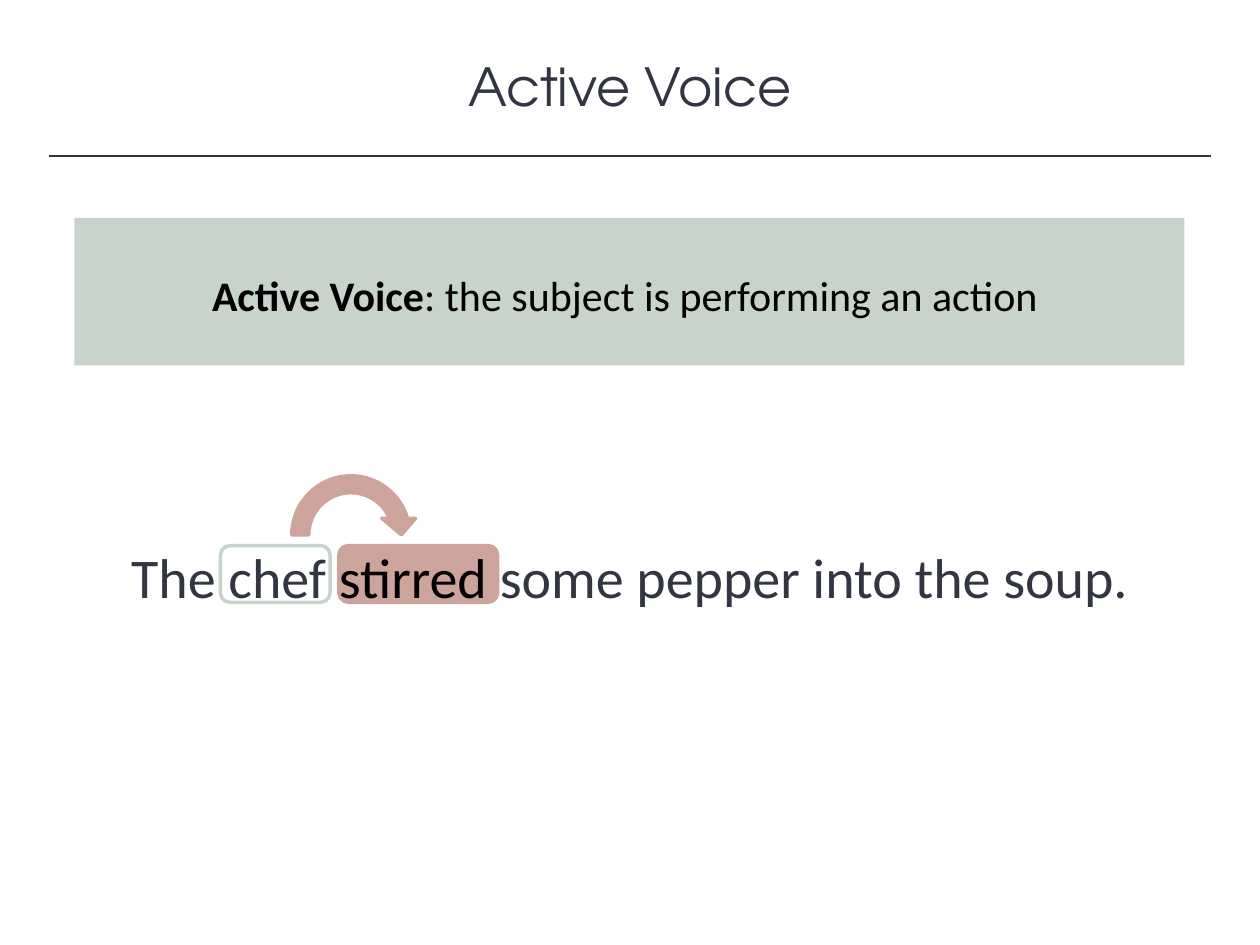
from dataclasses import dataclass

from pptx import Presentation
from pptx.dml.color import RGBColor
from pptx.enum.shapes import MSO_CONNECTOR, MSO_SHAPE
from pptx.enum.text import MSO_ANCHOR, PP_ALIGN
from pptx.oxml.ns import qn
from pptx.util import Inches, Pt
from lxml.etree import SubElement

WIDTH, HEIGHT = 10, 7.5


@dataclass(frozen=True)
class Theme:
    ink: str = "323542"
    black: str = "000000"
    sage: str = "C7D4CB"
    rose: str = "CCA49C"
    heading_font: str = "TeX Gyre Adventor"
    body_font: str = "Calibri"
    title_size: float = 30
    definition_size: float = 24
    sentence_size: float = 32
    rule_width: float = 1
    mark_width: float = 2


class VoiceSlide:
    """Style and current slide; boxes are (left, top, width, height) on a one-inch grid."""

    def __init__(self, prs, theme):
        self.theme = theme
        self.s = prs.slides.add_slide(prs.slide_layouts[5])

    def fill_text(self, sp, runs, size, font, space_after=0, anchor=MSO_ANCHOR.MIDDLE):
        tf = sp.text_frame
        tf.word_wrap = True
        tf.vertical_anchor = anchor
        p = tf.paragraphs[0]
        p.alignment = PP_ALIGN.CENTER
        p.space_after = Pt(space_after)
        for text, color, bold in runs:
            r = p.add_run()
            r.text = text
            formats = {"name": font, "size": Pt(size), "bold": bold}
            for name, value in formats.items():
                setattr(r.font, name, value)
            r.font.color.rgb = RGBColor.from_string(color)

    def title(self, text, box):
        sp = self.s.shapes.title
        for name, value in zip(("left", "top", "width", "height"), box):
            setattr(sp, name, Inches(value))
        self.fill_text(sp, [(text, self.theme.ink, False)],
                       self.theme.title_size, self.theme.heading_font)

    def rule(self, margin, top):
        line = self.s.shapes.add_connector(
            MSO_CONNECTOR.STRAIGHT, Inches(margin), Inches(top),
            Inches(WIDTH - margin), Inches(top))
        line.line.color.rgb = RGBColor.from_string(self.theme.ink)
        line.line.width = Pt(self.theme.rule_width)
        SubElement(line._element.spPr, qn("a:effectLst"))

    def shape(self, kind, box, fill=None, outline=None):
        sp = self.s.shapes.add_shape(kind, *map(Inches, box))
        sp.shadow.inherit = False
        if fill:
            sp.fill.solid()
            sp.fill.fore_color.rgb = RGBColor.from_string(fill)
        else:
            sp.fill.background()
        if outline:
            sp.line.color.rgb = RGBColor.from_string(outline)
            sp.line.width = Pt(self.theme.mark_width)
        else:
            sp.line.fill.background()
        return sp

    def text(self, runs, box, size, space_after=0):
        sp = self.s.shapes.add_textbox(*map(Inches, box))
        self.fill_text(sp, runs, size, self.theme.body_font, space_after)


def main():
    prs = Presentation()
    prs.slide_width, prs.slide_height = Inches(WIDTH), Inches(HEIGHT)
    theme = Theme()
    slide = VoiceSlide(prs, theme)

    # Heading
    slide.title("Active Voice", (0, 0.37, WIDTH, 0.61))
    slide.rule(0.39, 1.24)

    # Definition banner
    slide.shape(MSO_SHAPE.RECTANGLE, (0.59, 1.73, 8.81, 1.17), theme.sage)
    definition = slide.shape(MSO_SHAPE.RECTANGLE, (0.69, 2.09, 8.54, 0.5), theme.sage)
    slide.fill_text(definition,
                    [("Active Voice", theme.black, True),
                     (": the subject is performing an action", theme.black, False)],
                    theme.definition_size, theme.body_font, anchor=MSO_ANCHOR.TOP)

    # Verb and subject marks, with the arrow from one to the other
    mark_top, mark_height = 4.33, 0.45
    slide.shape(MSO_SHAPE.ROUNDED_RECTANGLE, (2.69, mark_top, 1.26, mark_height),
                theme.rose, theme.rose)
    slide.shape(MSO_SHAPE.CIRCULAR_ARROW, (2.25, 3.71, 1.07, 1.07),
                theme.rose, theme.rose)
    slide.shape(MSO_SHAPE.ROUNDED_RECTANGLE, (1.75, mark_top, 0.87, mark_height),
                outline=theme.sage)

    # Example sentence
    slide.text([("The chef ", theme.ink, False),
                ("stirred", theme.black, False),
                (" some pepper into the soup.", theme.ink, False)],
               (0.73, 4.25, 8.54, 0.64), theme.sentence_size, space_after=18)

    prs.save("out.pptx")


if __name__ == "__main__":
    main()
